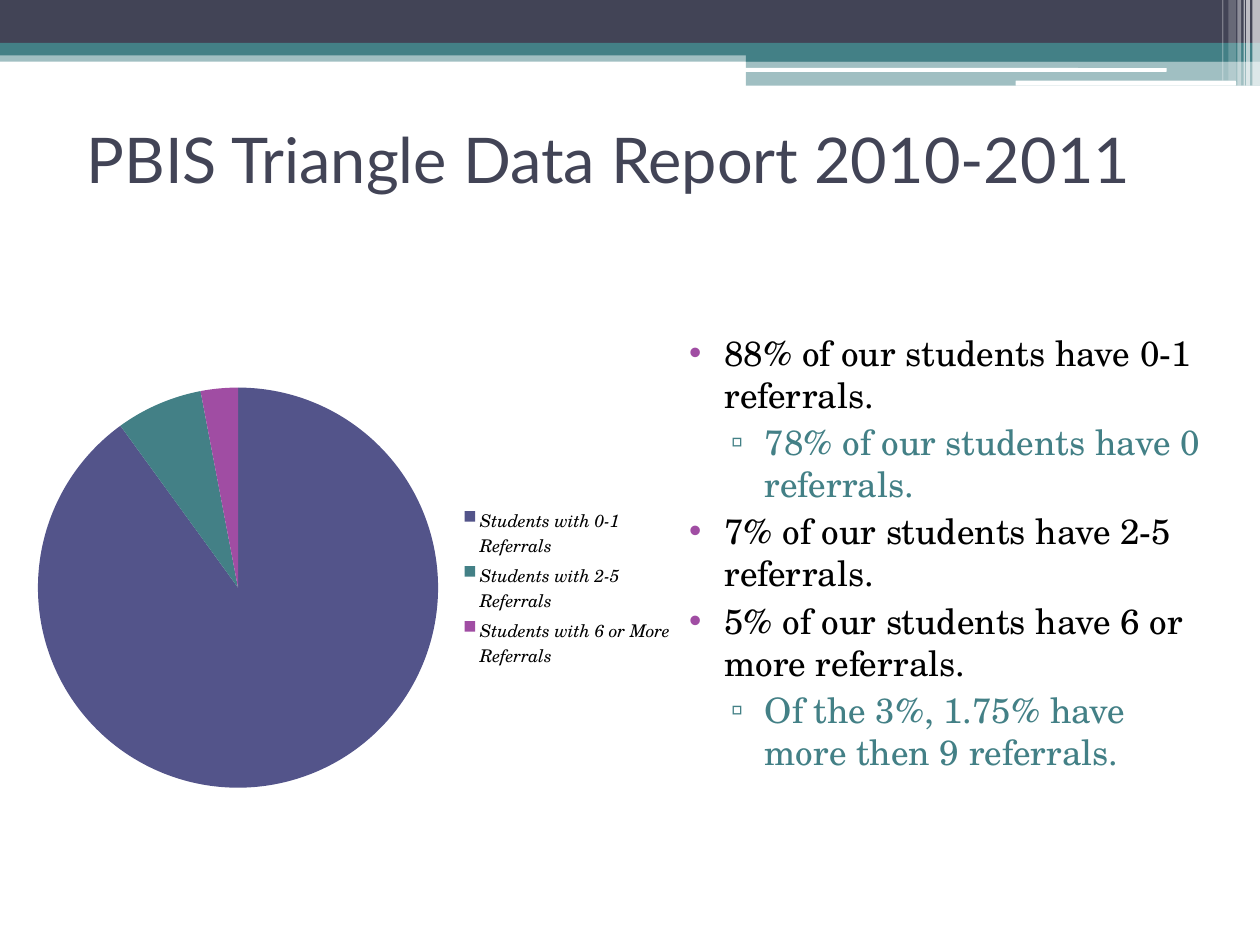
from lxml.etree import SubElement as Sub
from pptx import Presentation
from pptx.chart.data import CategoryChartData as Data
from pptx.dml.color import RGBColor as RGB
from pptx.enum.chart import XL_CHART_TYPE as Kind, XL_LEGEND_POSITION as Side
from pptx.enum.shapes import MSO_SHAPE as Form
from pptx.enum.text import MSO_ANCHOR as Anchor, MSO_AUTO_SIZE as Fit, PP_ALIGN as Align
from pptx.oxml.ns import qn
from pptx.util import Inches, Pt

HUES = {"navy": "424456", "teal": "438086", "white": "FFFFFF",
        "black": "000000", "plum": "A04DA3", "indigo": "53548A"}
HEAD, TEXT = "Lato", "TeX Gyre Schola"


def style(font, face, size, hue):
    font.name, font.size = face, Pt(size)
    font.color.rgb = RGB.from_string(HUES[hue])


def frame(node, index, *box, inner=False):
    """Pin a chart part to a box given as shares of the chart."""
    for old in node.findall(qn("c:layout")):
        node.remove(old)
    lay = Sub(node, qn("c:layout"))
    node.insert(index, lay)
    man = Sub(lay, qn("c:manualLayout"))
    pairs = [("layoutTarget", "inner")] if inner else []
    pairs += [("xMode", "edge"), ("yMode", "edge"), *zip("xywh", box)]
    for tag, val in pairs:
        Sub(man, qn(f"c:{tag}")).set("val", str(val))


deck = Presentation()
deck.slide_width, deck.slide_height = Inches(10), Inches(7.5)
slide = deck.slides.add_slide(deck.slide_layouts[1])
shapes = slide.shapes
title, body = slide.placeholders

# Header bands and the stripes at the right: left, top, width, height, hue, opacity
bands = [
    (0, 0.4, 10, 0.09, "teal", 50),
    (0, 0, 10, 0.34, "navy", 100),
    (0, 0.34, 10, 0.1, "teal", 100),
    (5.92, 0.39, 4.08, 0.1, "teal", 100),
    (5.92, 0.48, 4.08, 0.2, "teal", 50),
    (5.91, 0.54, 3.35, 0.03, "white", 100),
    (8.06, 0.64, 1.75, 0.04, "white", 100),
]
stripes = [(9.94, 0.06, 0.68, 65), (9.89, 0.03, 0.68, 65), (9.87, 0.01, 0.68, 60),
           (9.82, 0.03, 0.68, 40), (9.75, 0.06, 0.64, 20), (9.7, 0.01, 0.64, 30)]
bands += [(x, 0, w, h, "white", a) for x, w, h, a in stripes]
for *box, hue, alpha in bands:
    form = Form.ROUNDED_RECTANGLE if hue == "white" and alpha == 100 else Form.RECTANGLE
    band = shapes.add_shape(form, *map(Inches, box))
    band.shadow.inherit = False
    band.line.fill.background()
    band.fill.solid()
    band.fill.fore_color.rgb = RGB.from_string(HUES[hue])
    if alpha < 100:
        tint = band.element.find(".//" + qn("a:srgbClr"))
        Sub(tint, qn("a:alpha")).set("val", str(alpha * 1000))

# Title and list stand in front of the bands
for holder, box in ((title, (0.33, 0.67, 9, 1.17)), (body, (5.25, 2.58, 4.42, 4.12))):
    holder.left, holder.top, holder.width, holder.height = map(Inches, box)
    holder.text_frame.auto_size = Fit.NONE
    shapes.element.append(holder.element)

title.text_frame.text = "PBIS Triangle Data Report 2010-2011"
title.text_frame.vertical_anchor = Anchor.MIDDLE
line = title.text_frame.paragraphs[0]
line.alignment = Align.CENTER
style(line.font, HEAD, 36, "navy")

points = [
    (0, "88% of our students have 0-1 referrals."),
    (1, "78% of our students have 0 referrals."),
    (0, "7% of our students have 2-5 referrals."),
    (0, "5% of our students have 6 or more referrals."),
    (1, "Of the 3%, 1.75% have more then 9 referrals."),
]
levels = [("black", "plum", "•", 0.4, -0.28), ("teal", "teal", "▫", 0.72, -0.27)]
body.text_frame.text = "\n".join(text for _, text in points)
for line, (level, _) in zip(body.text_frame.paragraphs, points):
    hue, dot, mark, left, hang = levels[level]
    line.level = level
    line.space_before = Pt(3)
    style(line.font, TEXT, 20, hue)
    props = line._p.get_or_add_pPr()
    props.set("marL", str(Inches(left)))
    props.set("indent", str(Inches(hang)))
    # Bullet nodes must come before the paragraph's default run format
    spot = props.find(qn("a:defRPr"))
    color = Sub(props, qn("a:buClr"))
    Sub(color, qn("a:srgbClr")).set("val", HUES[dot])
    char = Sub(props, qn("a:buChar"))
    char.set("char", mark)
    if spot is not None:
        props.append(spot)

data = Data()
data.categories = ["Students with 0-1 Referrals", "Students with 2-5 Referrals",
                   "Students with 6 or More Referrals"]
data.add_series("Series 1", (90, 7, 3))
box = map(Inches, (0.17, 2.25, 5.25, 4.83))
chart = shapes.add_chart(Kind.PIE, *box, data).chart
chart.has_title = False
style(chart.font, TEXT, 10, "black")
plot = chart.plots[0]
plot.vary_by_categories = True
for i, hue in enumerate(("indigo", "teal", "plum")):
    fill = plot.series[0].points[i].format.fill
    fill.solid()
    fill.fore_color.rgb = RGB.from_string(HUES[hue])

chart.has_legend = True
legend = chart.legend
legend.position = Side.RIGHT
legend.include_in_layout = False
style(legend.font, TEXT, 10, "black")
legend.font.italic = True
area = chart.element.find(".//" + qn("c:plotArea"))
frame(area, 0, 0.025, 0.17, 0.605, 0.66, inner=True)
frame(chart.element.find(".//" + qn("c:legend")), 1, 0.66, 0.36, 0.33, 0.28)

deck.save("out.pptx")
